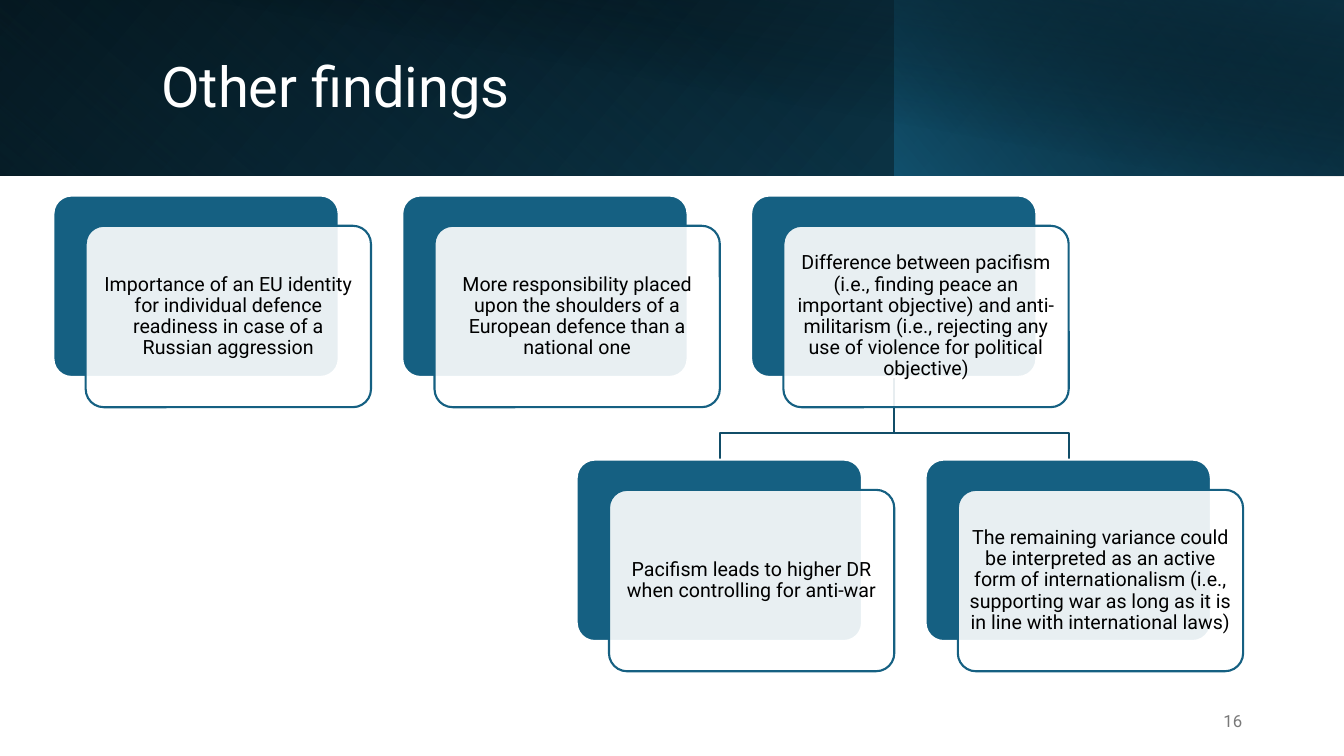
from dataclasses import dataclass

from lxml.etree import SubElement
from pptx import Presentation
from pptx.dml.color import RGBColor
from pptx.enum.shapes import MSO_SHAPE as Shape
from pptx.enum.text import MSO_ANCHOR as Anchor, MSO_AUTO_SIZE as AutoSize, PP_ALIGN as Align
from pptx.oxml.ns import qn
from pptx.util import Pt

PX = 9144  # one hundredth of an inch
PAGE_WIDTH, PAGE_HEIGHT = 1333, 750
CARD_WIDTH, CARD_HEIGHT = 283, 180
CARD_LEFT, CARD_TOP = 53, 194
COLUMN_STEP, ROW_STEP = 346, 262
FRONT_SHIFT_X, FRONT_SHIFT_Y = 32, 30

# Column (in steps), row, text
FINDINGS = [
    (0, 0, "Importance of an EU identity for individual defence readiness "
           "in case of a Russian aggression"),
    (1, 0, "More responsibility placed upon the shoulders of a European "
           "defence than a national one"),
    (2, 0, "Difference between pacifism (i.e., finding peace an important "
           "objective) and anti-militarism (i.e., rejecting any use of "
           "violence for political objective)"),
    (1.5, 1, "Pacifism leads to higher DR when controlling for anti-war"),
    (2.5, 1, "The remaining variance could be interpreted as an active form "
             "of internationalism (i.e., supporting war as long as it is in "
             "line with international laws)"),
]
PARENT_COLUMN, CHILD_COLUMNS = 2, (2.5, 1.5)


@dataclass(frozen=True)
class Theme:
    font: str = "Roboto"
    white: str = "FFFFFF"
    black: str = "000000"
    blue: str = "156082"
    deep_blue: str = "104862"
    navy: str = "0B3041"
    branch: str = "114D68"
    grey: str = "797979"
    title_size: int = 40
    body_size: int = 14
    number_size: int = 12
    line_width: float = 1.5


class SlideBuilder:
    def __init__(self, page, theme):
        self.page = page
        self.theme = theme

    def shape(self, kind, left, top, width, height):
        box = self.page.shapes.add_shape(
            kind, left * PX, top * PX, width * PX, height * PX)
        box.shadow.inherit = False
        return box

    def outline(self, box, color):
        box.line.color.rgb = RGBColor.from_string(color)
        box.line.width = Pt(self.theme.line_width)

    def set_text(self, box, text, size, color, align, spacing=None):
        frame = box.text_frame
        frame.text = text
        frame.word_wrap = True
        frame.auto_size = AutoSize.NONE
        frame.vertical_anchor = Anchor.MIDDLE
        para = frame.paragraphs[0]
        para.alignment = align
        para.line_spacing = spacing
        span = para.runs[0]
        span.font.name = self.theme.font
        span.font.size = Pt(size)
        span.font.color.rgb = RGBColor.from_string(color)

    def gradient_band(self, left, width, height, angle, stops):
        """Stops are (position, colour, opacity), the numbers in percent."""
        band = self.shape(Shape.RECTANGLE, left, 0, width, height)
        band.line.fill.background()
        band.fill.gradient()
        gradient = band.element.spPr.find(qn("a:gradFill"))
        for child in list(gradient):
            gradient.remove(child)
        gradient.set("rotWithShape", "1")
        stop_list = SubElement(gradient, qn("a:gsLst"))
        for position, color, opacity in stops:
            stop = SubElement(stop_list, qn("a:gs"), pos=str(position * 1000))
            tint = SubElement(stop, qn("a:srgbClr"), val=color)
            SubElement(tint, qn("a:alpha"), val=str(opacity * 1000))
        SubElement(gradient, qn("a:lin"), ang=str(angle * 60000), scaled="0")

    def title(self, text, left, top, width, height):
        box = self.page.shapes.title
        box.left, box.top = left * PX, top * PX
        box.width, box.height = width * PX, height * PX
        self.set_text(box, text, self.theme.title_size, self.theme.white, Align.LEFT, 0.9)
        box.element.getparent().append(box.element)  # in front of the bands

    def branch(self, start_x, start_y, bend_y, end_x, end_y):
        builder = self.page.shapes.build_freeform(start_x, start_y, scale=PX)
        builder.add_line_segments(
            [(start_x, bend_y), (end_x, bend_y), (end_x, end_y)], close=False)
        line = builder.convert_to_shape()
        line.shadow.inherit = False
        line.fill.background()
        self.outline(line, self.theme.branch)

    def card(self, left, top, text):
        theme = self.theme
        back = self.shape(Shape.ROUNDED_RECTANGLE, left, top, CARD_WIDTH, CARD_HEIGHT)
        front = self.shape(Shape.ROUNDED_RECTANGLE, left + FRONT_SHIFT_X,
                           top + FRONT_SHIFT_Y, CARD_WIDTH, CARD_HEIGHT)
        for box, fill, line in ((back, theme.blue, theme.white),
                                (front, theme.white, theme.blue)):
            box.adjustments[0] = 0.1
            box.fill.solid()
            box.fill.fore_color.rgb = RGBColor.from_string(fill)
            self.outline(box, line)
        tint = front.element.spPr.find(qn("a:solidFill")).find(qn("a:srgbClr"))
        SubElement(tint, qn("a:alpha"), val="90000")
        frame = front.text_frame
        frame.margin_left = frame.margin_right = 6 * PX
        frame.margin_top = frame.margin_bottom = 6 * PX
        self.set_text(front, text, theme.body_size, theme.black, Align.CENTER, 0.9)

    def page_number(self, text, left, top, width, height):
        box = self.page.shapes.add_textbox(left * PX, top * PX, width * PX, height * PX)
        self.set_text(box, text, self.theme.number_size, self.theme.grey, Align.RIGHT)


def card_left(column):
    return CARD_LEFT + int(column * COLUMN_STEP)


def card_top(row):
    return CARD_TOP + row * ROW_STEP


def main():
    deck = Presentation()
    deck.slide_width, deck.slide_height = PAGE_WIDTH * PX, PAGE_HEIGHT * PX
    theme = Theme()
    slide = SlideBuilder(deck.slides.add_slide(deck.slide_layouts[5]), theme)

    slide.gradient_band(0, PAGE_WIDTH, 174, 40,
                        [(0, theme.black, 100), (100, theme.deep_blue, 100)])
    slide.gradient_band(0, 888, 174, 130,
                        [(20, theme.blue, 0), (100, theme.navy, 55)])
    slide.gradient_band(887, 446, 174, 320,
                        [(0, theme.blue, 66), (100, theme.black, 30)])
    slide.gradient_band(50, PAGE_WIDTH - 50, 175, 280,
                        [(50, theme.black, 0), (99, theme.navy, 52)])
    slide.title("Other findings", 150, 32, 1082, 113)

    half = CARD_WIDTH // 2 + 1
    for column in CHILD_COLUMNS:
        slide.branch(card_left(PARENT_COLUMN) + half, card_top(0) + CARD_HEIGHT, 430,
                     card_left(column) + half, card_top(1))
    for column, row, text in FINDINGS:
        slide.card(card_left(column), card_top(row), text)
    slide.page_number("16", 942, 695, 300, 40)

    deck.save("out.pptx")


if __name__ == "__main__":
    main()
